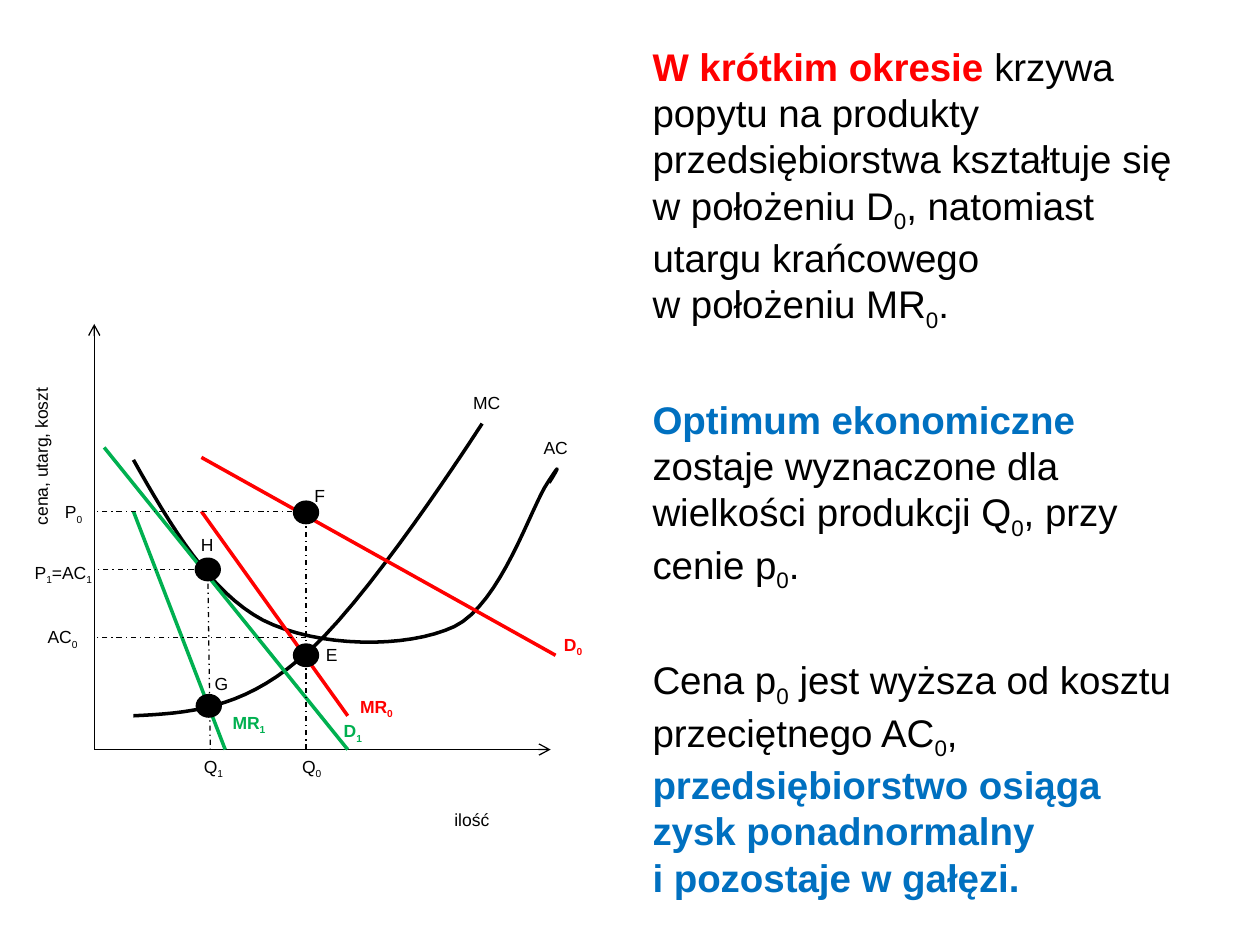
import pptx
import pptx.util
import pptx.dml.color
import pptx.enum.dml
import pptx.enum.shapes
import pptx.enum.text
import pptx.oxml.ns
import lxml.etree

Cm, Pt = pptx.util.Cm, pptx.util.Pt
RGBColor = pptx.dml.color.RGBColor
BLACK = RGBColor(0x00, 0x00, 0x00)
RED = RGBColor(0xFF, 0x00, 0x00)
BLUE = RGBColor(0x00, 0x70, 0xC0)
GREEN = RGBColor(0x00, 0xB0, 0x50)
FONT = "Arial"
DASH = pptx.enum.dml.MSO_LINE.DASH_DOT

PARAGRAPHS = [
    [("W krótkim okresie ", RED),
     ("krzywa popytu na produkty przedsiębiorstwa kształtuje się \n"
      "w położeniu D_0_, natomiast utargu krańcowego \nw położeniu MR_0_.", BLACK)],
    [("Optimum ekonomiczne ", BLUE),
     ("zostaje wyznaczone dla wielkości produkcji Q_0_, przy cenie p_0_.", BLACK)],
    [("Cena p_0_ jest wyższa od kosztu przeciętnego AC_0_, ", BLACK),
     ("przedsiębiorstwo osiąga zysk ponadnormalny \ni pozostaje w gałęzi.", BLUE)],
]

X_Q1, X_Q0 = 2.29, 4.27
Y_P0, Y_P1, Y_AC0 = 3.78, 4.95, 6.32
AC_CURVE = [(0.79, 2.74), (1.55, 4.09), (2.34, 5.41), (3.4, 5.97),
            (4.5, 6.53), (6.3, 6.55), (7.26, 6.1),
            (8.2, 5.64), (8.81, 3.68), (9.14, 3.2),
            (9.45, 2.72), (9.32, 2.97), (9.17, 3.2)]
MC_CURVE = [(0.79, 7.9), (1.88, 7.85), (2.95, 7.77), (4.11, 6.78),
            (5.38, 5.82), (7.82, 2.01), (7.82, 2.01)]
DEMAND_LINES = [
    (2.16, 2.69, 9.3, 6.68, RED),
    (2.16, 3.78, 5.11, 7.9, RED),
    (0.2, 2.49, 5.11, 8.58, GREEN),
    (0.79, 3.78, 2.64, 8.58, GREEN),
]
POINTS = [(X_Q1, Y_P1), (X_Q1 + 0.02, 7.7), (X_Q0, 6.68), (X_Q0, 3.8)]
LABELS = [
    ("ilość", 7.01, 9.65, 1.6, BLACK),
    ("Q_0", 3.94, 8.58, 1.12, BLACK),
    ("Q_1", 1.96, 8.58, 1.12, BLACK),
    ("P_0", -0.84, 3.45, 0.91, BLACK),
    ("P_1_=AC_1", -1.45, 4.67, 1.83, BLACK),
    ("AC_0", -1.19, 5.97, 1.4, BLACK),
    ("AC", 8.81, 2.16, 1.07, BLACK),
    ("MC", 7.39, 1.24, 1.42, BLACK),
    ("D_0", 9.22, 6.12, 0.99, RED),
    ("MR_0", 5.11, 7.37, 1.27, RED),
    ("D_1", 4.78, 7.87, 0.99, GREEN),
    ("MR_1", 2.54, 7.7, 1.27, GREEN),
    ("E", 4.42, 6.32, 0.79, BLACK),
    ("F", 4.19, 3.12, 0.79, BLACK),
    ("G", 2.18, 6.91, 0.79, BLACK),
    ("H", 1.9, 4.11, 0.79, BLACK),
]


def add_runs(p, text, size, color):
    for i, part in enumerate(text.split("_")):
        for j, line in enumerate(part.split("\n")):
            if j:
                p.add_line_break()
            if not line:
                continue
            r = p.add_run()
            r.text = line
            r.font.name = FONT
            r.font.size = Pt(size)
            r.font.bold = color != BLACK
            r.font.color.rgb = color
            if i % 2:
                r.font._element.set("baseline", "-25000")


def add_line(s, x1, y1, x2, y2, color=BLACK, width=0.75, dash=None, arrow=False):
    c = s.shapes.add_connector(pptx.enum.shapes.MSO_CONNECTOR.STRAIGHT,
                               Cm(x1), Cm(y1), Cm(x2), Cm(y2))
    c.line.color.rgb = color
    c.line.width = Pt(width)
    if dash:
        c.line.dash_style = dash
    if arrow:
        lxml.etree.SubElement(c.line._get_or_add_ln(), pptx.oxml.ns.qn("a:tailEnd"), type="arrow")
    lxml.etree.SubElement(c._element.spPr, pptx.oxml.ns.qn("a:effectLst"))


def bezier_points(nodes, steps=16):
    pts = [nodes[0]]
    for k in range(0, len(nodes) - 1, 3):
        quad = nodes[k:k + 4]
        for n in range(1, steps + 1):
            t = n / steps
            weights = ((1 - t) ** 3, 3 * t * (1 - t) ** 2, 3 * t * t * (1 - t), t ** 3)
            pts.append(tuple(sum(w * q[axis] for w, q in zip(weights, quad)) for axis in (0, 1)))
    return pts


def add_curve(s, left, top, nodes):
    pts = [(Cm(left + x), Cm(top + y)) for x, y in bezier_points(nodes)]
    fb = s.shapes.build_freeform(*pts[0])
    fb.add_line_segments(pts[1:], close=False)
    sp = fb.convert_to_shape()
    sp.shadow.inherit = False
    sp.fill.background()
    sp.line.color.rgb = BLACK
    sp.line.width = Pt(2)


def add_point(s, x, y, width=0.46, height=0.41):
    sp = s.shapes.add_shape(pptx.enum.shapes.MSO_SHAPE.OVAL, Cm(x - width / 2),
                            Cm(y - height / 2), Cm(width), Cm(height))
    sp.shadow.inherit = False
    sp.fill.solid()
    sp.fill.fore_color.rgb = BLACK
    sp.line.color.rgb = BLACK
    sp.line.width = Pt(2)


def add_label(s, text, x, y, width, color=BLACK):
    sp = s.shapes.add_textbox(Cm(x), Cm(y), Cm(width), Cm(0.69))
    sp.text_frame.word_wrap = True
    add_runs(sp.text_frame.paragraphs[0], text, 10, color)
    return sp


def draw_cost_diagram(s, left, top, width, height):
    bottom = top + height
    add_line(s, left, bottom, left, top, arrow=True)
    add_line(s, left, bottom, left + width, bottom, arrow=True)
    for curve in (AC_CURVE, MC_CURVE):
        add_curve(s, left, top, curve)
    for x1, y1, x2, y2, color in DEMAND_LINES:
        add_line(s, left + x1, top + y1, left + x2, top + y2, color, 2)
    for x, y in ((X_Q0, Y_P0), (X_Q1, Y_P1), (X_Q0, Y_AC0)):
        add_line(s, left + x, top + y, left, top + y, dash=DASH)
    add_line(s, left + X_Q0, bottom, left + X_Q0, top + Y_P0, dash=DASH)
    add_line(s, left + X_Q1, top + Y_P1, left + X_Q1 + 0.05, bottom, dash=DASH)
    for x, y in POINTS:
        add_point(s, left + x, top + y)
    for text, x, y, w, color in LABELS:
        add_label(s, text, left + x, top + y, w, color)
    add_label(s, "cena, utarg, koszt", left - 2.87, top + 2.16, 3.61).rotation = 270


def fill_body(s, left, top, width, height):
    sp = s.placeholders[1]
    sp.left, sp.top, sp.width, sp.height = Cm(left), Cm(top), Cm(width), Cm(height)
    tf = sp.text_frame
    tf.word_wrap = True
    tf.auto_size = pptx.enum.text.MSO_AUTO_SIZE.NONE
    for i, parts in enumerate(PARAGRAPHS):
        p = tf.add_paragraph() if i else tf.paragraphs[0]
        pPr = p._p.get_or_add_pPr()
        pPr.set("marL", "0")
        pPr.set("indent", "0")
        lxml.etree.SubElement(pPr, pptx.oxml.ns.qn("a:buNone"))
        p.line_spacing = 1.0
        p.space_before = Pt(36 if i else 0)
        for text, color in parts:
            add_runs(p, text, 22, color)


def main():
    prs = pptx.Presentation()
    prs.slide_width, prs.slide_height = Cm(25.4), Cm(19.05)
    s = prs.slides.add_slide(prs.slide_layouts[1])
    title = s.shapes.title._element
    title.getparent().remove(title)
    fill_body(s, 12.9, 0.74, 11.23, 17.8)
    draw_cost_diagram(s, 1.9, 6.53, 9.2, 8.58)
    prs.save("out.pptx")


if __name__ == "__main__":
    main()
